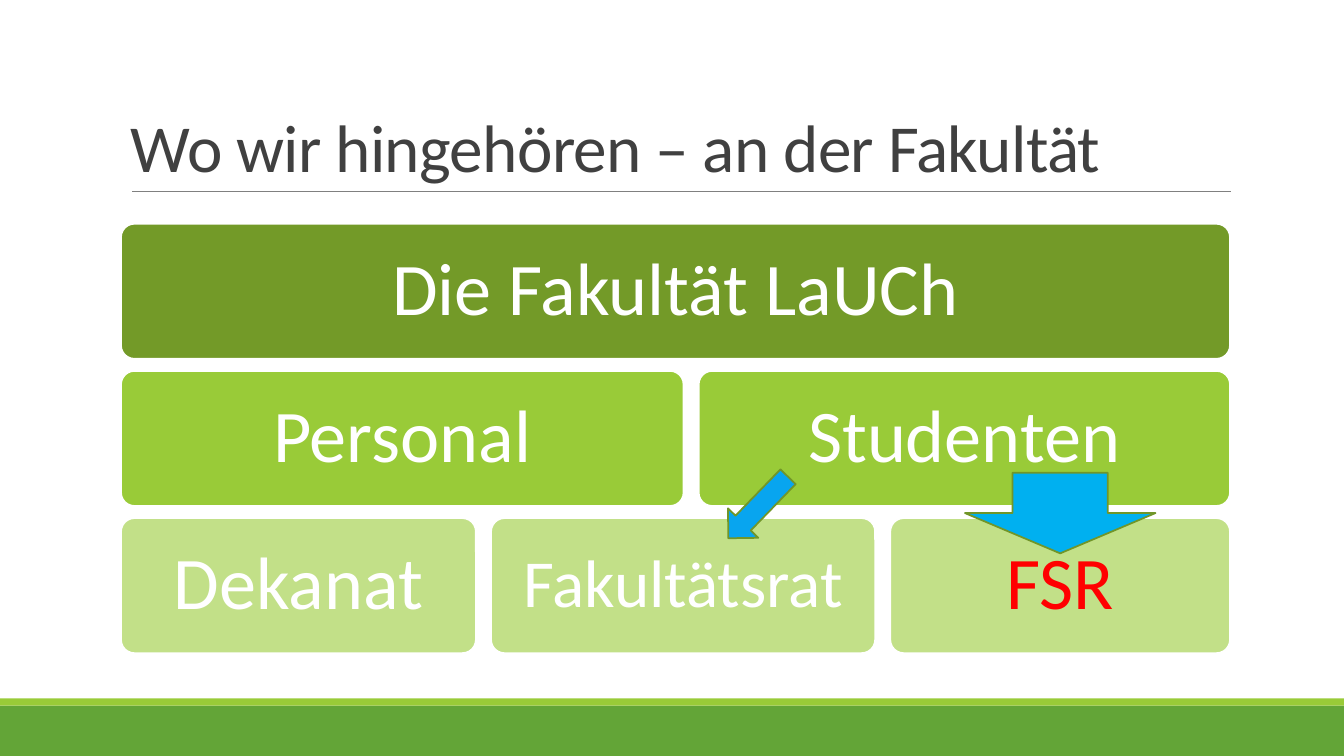
from pptx import Presentation
from pptx.dml.color import RGBColor
from pptx.enum.shapes import MSO_CONNECTOR, MSO_SHAPE
from pptx.enum.text import MSO_ANCHOR, PP_ALIGN
from pptx.oxml.ns import qn
from pptx.util import Inches, Pt
from lxml.etree import SubElement

WIDTH, HEIGHT = 13.33, 7.5
LEFT, TOP = 1.2, 2.22
BOX_HEIGHT, ROW_STEP, COLUMN_GAP = 1.34, 1.46, 0.15
TITLE = "Wo wir hingehören – an der Fakultät"
ROWS = [
    ("739A28", [("Die Fakultät LaUCh", 11, 53, "FFFFFF")]),
    ("99CB38", [("Personal", 5.58, 53, "FFFFFF"), ("Studenten", 5.27, 53, "FFFFFF")]),
    ("C2E088", [("Dekanat", 3.52, 53, "FFFFFF"), ("Fakultätsrat", 3.81, 48, "FFFFFF"),
                ("FSR", 3.37, 53, "FF0000")]),
]
BANDS = [(7, 0.5, "63A537"), (6.93, 0.07, "99CB38")]
ARROWS = [((9.57, 4.69, 1.89, 0.8), 0, "00B0F0"), ((7.31, 4.61, 0.42, 0.85), 44.1, "08A5EF")]


def color(value):
    """Turn a hex string into a colour."""
    return RGBColor.from_string(value)


def add_shape(page, kind, area, fill, line=None):
    """Add a flat preset shape, outlined if a line colour is given."""
    shape = page.shapes.add_shape(kind, *map(Inches, area))
    shape.shadow.inherit = False
    shape.fill.solid()
    shape.fill.fore_color.rgb = color(fill)
    if line:
        shape.line.color.rgb = color(line)
        shape.line.width = Pt(1.25)
    else:
        shape.line.fill.background()
    return shape


def write(shape, text, size, ink, align, anchor, spacing, inset=None, tracking=None):
    """Write one formatted line of text into a shape."""
    frame = shape.text_frame
    frame.word_wrap = True
    frame.vertical_anchor = anchor
    if inset is not None:
        frame.margin_left = frame.margin_right = Inches(inset)
        frame.margin_top = frame.margin_bottom = Inches(inset)
    para = frame.paragraphs[0]
    para.alignment = align
    para.line_spacing = spacing
    span = para.add_run()
    span.text = text
    span.font.name = "Calibri"
    span.font.size = Pt(size)
    span.font.color.rgb = color(ink)
    if tracking is not None:
        span._r.get_or_add_rPr().set("spc", str(int(tracking * 100)))


def main():
    """Build the faculty slide."""
    deck = Presentation()
    deck.slide_width, deck.slide_height = Inches(WIDTH), Inches(HEIGHT)
    page = deck.slides.add_slide(deck.slide_layouts[6])

    for top, height, fill in BANDS:
        add_shape(page, MSO_SHAPE.RECTANGLE, (0, top, WIDTH, height), fill)

    rule = page.shapes.add_connector(
        MSO_CONNECTOR.STRAIGHT, *map(Inches, (1.31, 1.9, 12.21, 1.9)))
    rule.line.color.rgb = color("808080")
    rule.line.width = Pt(0.5)
    SubElement(rule._element.spPr, qn("a:effectLst"))

    title = page.shapes.add_textbox(*map(Inches, (LEFT, 0.31, 11, 1.59)))
    write(title, TITLE, 48, "404040", PP_ALIGN.LEFT, MSO_ANCHOR.BOTTOM, 0.85, tracking=-0.5)

    for row, (fill, cells) in enumerate(ROWS):
        left = LEFT
        for text, width, size, ink in cells:
            area = (left, TOP + row * ROW_STEP, width, BOX_HEIGHT)
            box = add_shape(page, MSO_SHAPE.ROUNDED_RECTANGLE, area, fill, "FFFFFF")
            box.adjustments[0] = 0.1
            write(box, text, size, ink, PP_ALIGN.CENTER, MSO_ANCHOR.MIDDLE, 0.9, inset=0.26)
            left += width + COLUMN_GAP

    for area, angle, fill in ARROWS:
        arrow = add_shape(page, MSO_SHAPE.DOWN_ARROW, area, fill, "719629")
        arrow.rotation = angle

    deck.save("out.pptx")


if __name__ == "__main__":
    main()
